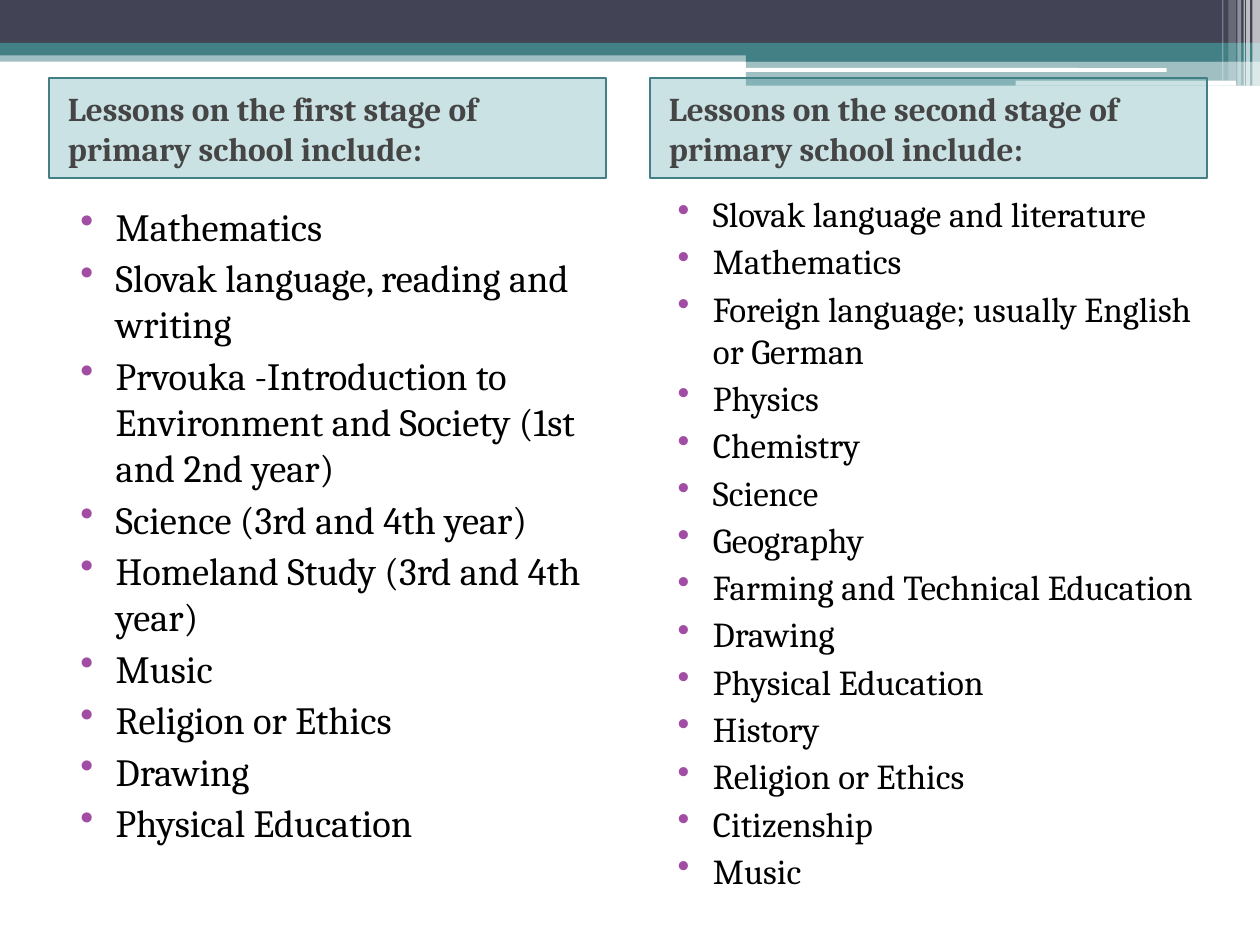
from lxml.etree import SubElement
from pptx import Presentation
from pptx.dml.color import RGBColor
from pptx.enum.shapes import MSO_SHAPE as Shape
from pptx.enum.text import MSO_ANCHOR as Anchor
from pptx.oxml.ns import qn
from pptx.util import Inches, Pt

NAVY = RGBColor(0x42, 0x44, 0x56)
TEAL = RGBColor(0x43, 0x80, 0x86)
HEADER_TEAL = RGBColor(0x32, 0x8E, 0x97)
PURPLE = RGBColor(0xA0, 0x4D, 0xA3)
GREY = RGBColor(0x45, 0x45, 0x45)
BLACK = RGBColor(0, 0, 0)
WHITE = RGBColor(0xFF, 0xFF, 0xFF)
FONT = "Cambria"
COLUMN_WIDTH = 4.42

# left, top, width, height, colour, opacity in percent
BANDS = [
    (0, 0.4, 10, 0.09, TEAL, 50),
    (0, 0, 10, 0.34, NAVY, 100),
    (0, 0.34, 10, 0.1, TEAL, 100),
    (5.92, 0.39, 4.08, 0.1, TEAL, 100),
    (5.92, 0.48, 4.08, 0.2, TEAL, 50),
]
ROUNDED_LINES = [(5.91, 0.54, 3.35, 0.03), (8.06, 0.64, 1.75, 0.04)]
# left, width, height, opacity in percent
STRIPES = [
    (9.94, 0.06, 0.68, 65),
    (9.89, 0.03, 0.68, 65),
    (9.87, 0.01, 0.68, 60),
    (9.82, 0.03, 0.68, 40),
    (9.75, 0.06, 0.64, 20),
    (9.7, 0.01, 0.64, 30),
]

FIRST_STAGE = [
    "Mathematics",
    "Slovak language, reading and writing",
    "Prvouka -Introduction to Environment and Society (1st and 2nd year)",
    "Science (3rd and 4th year)",
    "Homeland Study (3rd and 4th year)",
    "Music",
    "Religion or Ethics",
    "Drawing",
    "Physical Education",
]
SECOND_STAGE = [
    "Slovak language and literature",
    "Mathematics",
    "Foreign language; usually English or German",
    "Physics",
    "Chemistry",
    "Science",
    "Geography",
    "Farming and Technical Education",
    "Drawing",
    "Physical Education",
    "History",
    "Religion or Ethics",
    "Citizenship",
    "Music",
]


def add_block(page, left, top, width, height, color, opacity=100, kind=Shape.RECTANGLE):
    block = page.shapes.add_shape(
        kind, Inches(left), Inches(top), Inches(width), Inches(height))
    block.shadow.inherit = False
    block.line.fill.background()
    block.fill.solid()
    block.fill.fore_color.rgb = color
    if opacity < 100:
        fill_color = block.fill._xPr.find(qn("a:solidFill"))[0]
        SubElement(fill_color, qn("a:alpha"), val=str(opacity * 1000))
    return block


def style_paragraph(para, size, color, margin, indent=0, bold=False):
    para.space_before = Pt(3)
    para.font.name = FONT
    para.font.size = Pt(size)
    para.font.color.rgb = color
    para.font.bold = bold
    properties = para._p.get_or_add_pPr()
    properties.set("marL", str(Inches(margin)))
    properties.set("indent", str(Inches(indent)))
    return properties


def add_banner(page):
    for band in BANDS:
        add_block(page, *band)
    for line in ROUNDED_LINES:
        add_block(page, *line, WHITE, kind=Shape.ROUNDED_RECTANGLE)
    for left, width, height, opacity in STRIPES:
        add_block(page, left, 0, width, height, WHITE, opacity)


def add_header(page, left, top, width, height, text):
    box = add_block(page, left, top, width, height, HEADER_TEAL, 25)
    box.line.color.rgb = TEAL
    box.line.width = Pt(1)
    frame = box.text_frame
    frame.word_wrap = True
    frame.vertical_anchor = Anchor.MIDDLE
    para = frame.paragraphs[0]
    para.text = text
    style_paragraph(para, 19, GREY, 0.05, bold=True).set("algn", "l")


def add_lessons(page, left, top, width, height, lessons, size):
    box = page.shapes.add_textbox(
        Inches(left), Inches(top), Inches(width), Inches(height))
    frame = box.text_frame
    frame.word_wrap = True
    frame.text = "\n".join(lessons)
    for para in frame.paragraphs:
        properties = style_paragraph(para, size, BLACK, 0.4, -0.28)
        # The bullet elements go before the default run properties
        defaults = properties.find(qn("a:defRPr"))
        bullet_color = SubElement(properties, qn("a:buClr"))
        SubElement(bullet_color, qn("a:srgbClr"), val=str(PURPLE))
        bullet = SubElement(properties, qn("a:buChar"), char="•")
        defaults.addprevious(bullet_color)
        defaults.addprevious(bullet)


def main():
    deck = Presentation()
    deck.slide_width, deck.slide_height = Inches(10), Inches(7.5)
    page = deck.slides.add_slide(deck.slide_layouts[6])
    add_banner(page)

    # Column headers
    for left, stage in ((0.39, "first"), (5.16, "second")):
        add_header(page, left, 0.62, COLUMN_WIDTH, 0.79,
                   f"Lessons on the {stage} stage of primary school include:")

    # Lesson lists
    add_lessons(page, 0.42, 1.56, COLUMN_WIDTH, 5.65, FIRST_STAGE, 22)
    add_lessons(page, 5.16, 1.48, COLUMN_WIDTH, 6.02, SECOND_STAGE, 20)
    deck.save("out.pptx")


if __name__ == "__main__":
    main()
